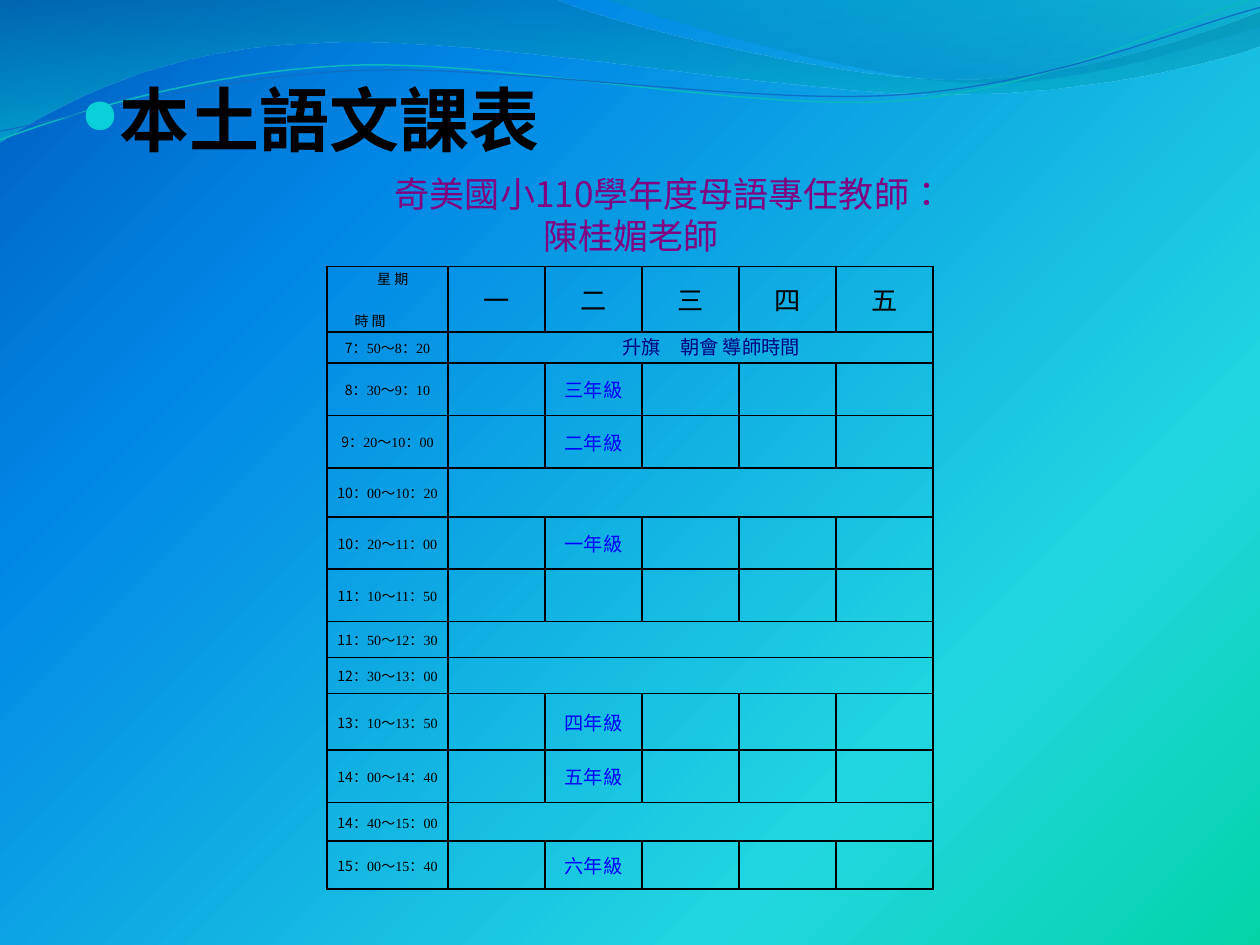
import pptx
import pptx.util
import pptx.oxml
import pptx.oxml.ns
import pptx.dml.color
import pptx.enum.text
from dataclasses import dataclass
from lxml import etree

Pt = pptx.util.Pt
qn = pptx.oxml.ns.qn
ALIGN = pptx.enum.text.PP_ALIGN
ANCHOR = pptx.enum.text.MSO_ANCHOR


@dataclass(frozen=True)
class Theme:
    black: str = "000000"
    navy: str = "000080"
    blue: str = "0000FF"
    purple: str = "800080"
    teal: str = "0BD0D9"
    head: int = 40
    sub: int = 20
    day: int = 15
    body: int = 11
    small: int = 8
    sans: str = "Arial"
    serif: str = "Times New Roman"
    noto: str = "Noto Sans CJK TC"
    plain: str = "Noto Sans CJK SC"


T = Theme()
LINEAR = '<a:lin ang="5400000" scaled="1"/>'
CORNER = '<a:path path="circle"><a:fillToRect l="100000" t="100000"/></a:path>'
SKY = [(0, "03D4A8", 100), (25, "21D6E0", 100), (75, "0087E6", 100), (100, "005CBF", 100)]

# A path is a list of points: two numbers make a line, six make a curve.
WAVES = [
    ([(0, 0), (316.8, -0.7), (342.7, 12.2, 478.1, 45.4, 545.8, 45.4),
      (614.2, 45.4, 689.8, 18.7, 720, 6.5), (720.7, 25.9),
      (707.8, 31.7, 626.4, 54.7, 537.1, 54), (447.8, 54, 275, 20.2, 185, 24.5),
      (92.9, 25.9, 33.1, 59.8, -0.7, 81.4), (0, 0)],
     [(0, "0074A1", 45), (100, "00C6CF", 55)]),
    ([(344.9, -0.7), (366.5, 7.9, 491, 44.6, 553.7, 46.8),
      (616.3, 49.7, 691.9, 23, 720, 15.1), (720, 0), (344.9, -0.7)],
     [(0, "00A1A9", 30), (80, "008BBF", 45)]),
]
STRANDS = [
    ([(0, 79.9), (34.6, 67, 113.8, 41, 199.4, 37.4),
      (284.4, 33.8, 427, 64.1, 513.4, 57.6), (599.8, 51.1, 675.4, 10.8, 718.6, -1.4)],
     "0AB8BF", 0.85),
    ([(0, 74.9), (33.8, 69.1, 118.1, 43.9, 203.8, 40.3),
      (290.2, 36.7, 429.8, 60.5, 516.2, 54), (601.9, 48.2, 677.5, 15.1, 720, 4.3)],
     "0F6FC6", 0.75),
]

DAYS = "一二三四五"
WIDTHS = [69.3] + [55.4] * len(DAYS)
LESSON, SPAN = "lesson", "span"
ROWS = [
    (17.7, "7：50～8：20", SPAN, "升旗　朝會 導師時間"),
    (30, "8：30～9：10", LESSON, "三年級"),
    (29.9, "9：20～10：00", LESSON, "二年級"),
    (28, "10：00～10：20", SPAN, ""),
    (29.9, "10：20～11：00", LESSON, "一年級"),
    (30, "11：10～11：50", LESSON, ""),
    (18.7, "11：50～12：30", SPAN, ""),
    (18.7, "12：30～13：00", SPAN, ""),
    (32.4, "13：10～13：50", LESSON, "四年級"),
    (30, "14：00～14：40", LESSON, "五年級"),
    (22, "14：40～15：00", SPAN, ""),
    (27.4, "15：00～15：40", LESSON, "六年級"),
]


def node(xml):
    space = 'xmlns:a="http://schemas.openxmlformats.org/drawingml/2006/main"'
    tag, rest = xml.split(" ", 1)
    return pptx.oxml.parse_xml(f"{tag} {space} {rest}")


def rgb(code):
    return pptx.dml.color.RGBColor.from_string(code)


def style(run, size, color, face, bold=False):
    run.font.size, run.font.name, run.font.bold = Pt(size), face, bold
    run.font.color.rgb = rgb(color)
    run._r.get_or_add_rPr().set("lang", "zh-TW")


def indent(para, first, left=0):
    props = para._p.get_or_add_pPr()
    props.set("marL", str(Pt(left)))
    props.set("indent", str(Pt(first)))
    return props


def blend(fill, root, stops, shade):
    """Fill with colour stops of (place, colour, opacity), all in percent."""
    fill.solid()
    marks = "".join(
        f'<a:gs pos="{at * 1000}"><a:srgbClr val="{code}">'
        f'<a:alpha val="{alpha * 1000}"/></a:srgbClr></a:gs>'
        for at, code, alpha in stops)
    old = root.find(".//" + qn("a:solidFill"))
    old.getparent().replace(old, node(
        f'<a:gradFill rotWithShape="1"><a:gsLst>{marks}</a:gsLst>{shade}</a:gradFill>'))


def bend(shape, route):
    """Join each three segments that stand for a curve into one Bezier segment."""
    lines = iter(list(shape._element.iter(qn("a:lnTo"))))
    for part in route[1:]:
        if len(part) == 2:
            next(lines)
            continue
        trio = [next(lines) for _ in range(3)]
        curve = etree.Element(qn("a:cubicBezTo"))
        trio[0].addprevious(curve)
        for line in trio:
            curve.append(line[0])
            line.getparent().remove(line)


def outline(slide, route, close):
    dots = [(Pt(x), Pt(y)) for part in route for x, y in zip(part[::2], part[1::2])]
    pen = slide.shapes.build_freeform(*dots[0], scale=1.0)
    pen.add_line_segments(dots[1:], close=close)
    shape = pen.convert_to_shape()
    shape.shadow.inherit = False
    bend(shape, route)
    return shape


def wave(slide, route, stops):
    shape = outline(slide, route, True)
    blend(shape.fill, shape._element, stops, LINEAR)
    shape.line.fill.background()


def strand(slide, route, color, width):
    shape = outline(slide, route, False)
    shape.fill.background()
    shape.line.color.rgb = rgb(color)
    shape.line.width = Pt(width)


def title(slide, text):
    box = slide.shapes.title
    box.left, box.top, box.width, box.height = Pt(38.9), Pt(40.3), Pt(618.5), Pt(61.9)
    frame = box.text_frame
    frame.text = text
    frame.vertical_anchor = ANCHOR.TOP
    para = frame.paragraphs[0]
    para.alignment = ALIGN.LEFT
    props = indent(para, -21.6, 21.6)
    props.append(node(f'<a:buClr ><a:srgbClr val="{T.teal}"/></a:buClr>'))
    props.append(node('<a:buSzPct val="70000"/>'))
    props.append(node('<a:buChar char="●"/>'))
    style(para.runs[0], T.head, T.black, T.sans, True)
    slide.shapes._spTree.append(box._element)  # bring in front of the waves


def caption(slide, text):
    frame = slide.shapes.add_textbox(Pt(187.2), Pt(95), Pt(347), Pt(55.4)).text_frame
    frame.word_wrap = True
    frame.vertical_anchor = ANCHOR.MIDDLE
    frame.text = text
    para = frame.paragraphs[0]
    para.alignment = ALIGN.CENTER
    indent(para, 23.8)
    style(para.runs[0], T.sub, T.purple, T.plain)


def frame_cell(cell):
    """Clear the fill, draw black borders and set the margins."""
    cell.fill.background()
    cell.margin_left = cell.margin_right = Pt(3.6)
    cell.margin_top = cell.margin_bottom = 0
    cell.vertical_anchor = ANCHOR.MIDDLE
    props = cell._tc.get_or_add_tcPr()
    for place, side in enumerate("LRTB"):
        props.insert(place, node(
            f'<a:ln{side} w="{Pt(1)}"><a:solidFill><a:srgbClr val="{T.black}"/>'
            f'</a:solidFill></a:ln{side}>'))
    para = cell.text_frame.paragraphs[0]._p
    etree.SubElement(para, qn("a:endParaRPr")).set("sz", str(T.small * 100))


def write(cell, text, size, color):
    cell.text_frame.text = text
    para = cell.text_frame.paragraphs[0]
    para.alignment = ALIGN.CENTER
    for run in para.runs:
        style(run, size, color, T.serif)
    return para


def corner(cell):
    cell.text_frame.text = "星 期\n時 間"
    day, time = cell.text_frame.paragraphs
    day.alignment = ALIGN.CENTER
    indent(day, 0, 6)
    time.alignment = ALIGN.LEFT
    time.space_before = Pt(12)
    indent(time, 12.2)
    for para in (day, time):
        style(para.runs[0], T.small, T.black, T.serif)


def clock(cell, text):
    """Write a time span, with its first hour in the sans face."""
    hour, mark, rest = text.partition("：")
    para = write(cell, hour, T.small, T.black)
    para.runs[0].font.name = T.noto
    run = para.add_run()
    run.text = mark + rest
    style(run, T.small, T.black, T.serif)


def agenda(slide):
    heights = [37.4] + [row[0] for row in ROWS]
    table = slide.shapes.add_table(len(heights), len(WIDTHS), Pt(186.8), Pt(152.4),
                                   Pt(sum(WIDTHS)), Pt(sum(heights))).table
    table.first_row = table.horz_banding = False
    for col, width in zip(table.columns, WIDTHS):
        col.width = Pt(width)
    for row, height in zip(table.rows, heights):
        row.height = Pt(height)
    for cell in table.iter_cells():
        frame_cell(cell)
    corner(table.cell(0, 0))
    for col, day in enumerate(DAYS, 1):
        write(table.cell(0, col), day, T.day, T.black)
    for row, (_, time, kind, text) in enumerate(ROWS, 1):
        clock(table.cell(row, 0), time)
        if kind == SPAN:
            cell = table.cell(row, 1)
            cell.merge(table.cell(row, len(DAYS)))
            if text:
                indent(write(cell, text, T.body, T.navy), 23.8)
                cell.vertical_anchor = ANCHOR.TOP
        elif text:
            write(table.cell(row, 2), text, T.body, T.blue)


def main():
    deck = pptx.Presentation()
    deck.slide_width, deck.slide_height = Pt(720), Pt(540)
    slide = deck.slides.add_slide(deck.slide_layouts.get_by_name("Title Only"))
    blend(slide.background.fill, slide._element, SKY, CORNER)
    for route, stops in WAVES:
        wave(slide, route, stops)
    for route, color, width in STRANDS:
        strand(slide, route, color, width)
    title(slide, "本土語文課表")
    agenda(slide)
    caption(slide, "奇美國小110學年度母語專任教師：陳桂媚老師")
    deck.save("out.pptx")


if __name__ == "__main__":
    main()
